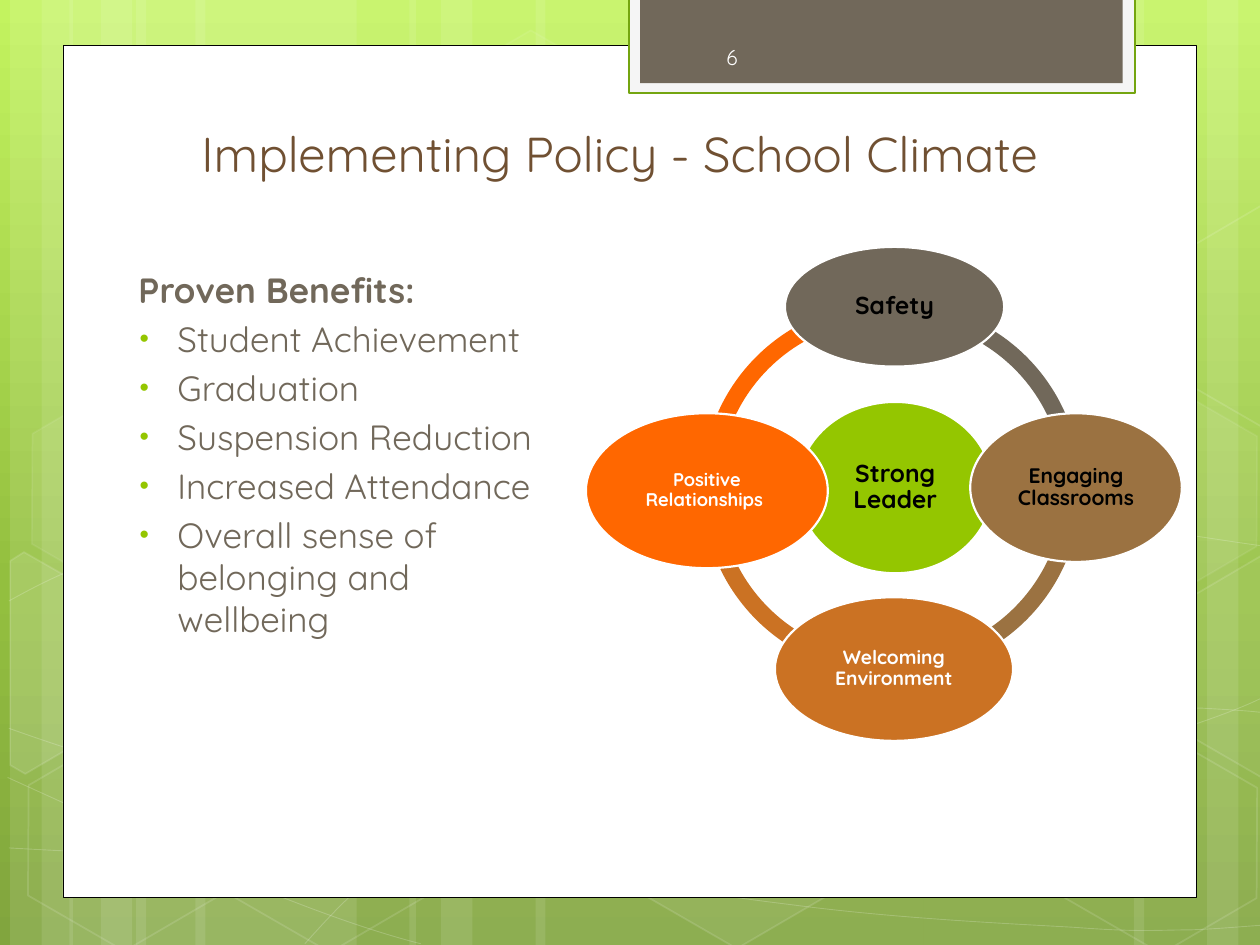
from copy import deepcopy
from math import cos, radians, sin
from lxml.etree import SubElement
from pptx import Presentation
from pptx.dml.color import RGBColor
from pptx.enum.shapes import MSO_SHAPE as SHAPE
from pptx.enum.text import MSO_ANCHOR as ANCHOR, PP_ALIGN as ALIGN
from pptx.oxml.ns import qn
from pptx.util import Inches, Pt

FONT = "Quicksand"
C = dict(white="FFFFFF", black="000000", taupe="71685A", green="94C600",
         edge="74A510", pale="F5F5F5", brown="705032", tan="9B7241",
         rust="CB7223", orange="FF6700", number="FEFEFE")
BACKGROUND = [(0, "C3F35F"), (0.62, "93BF3F"), (1, "81A53E")]

TITLE = "Implementing Policy - School Climate "
HEADING = "Proven Benefits:"
BENEFITS = ["Student Achievement", "Graduation", "Suspension Reduction",
            "Increased Attendance", "Overall sense of belonging and wellbeing"]

# Left, width
STRIPES = [(1.08, 1.75), (0.08, 0.5), (0.33, 0.83), (1.55, 1.75), (0.55, 0.5),
           (0.8, 0.83), (7.33, 1.75), (9.58, 0.5), (9, 0.83), (4.25, 3.08),
           (3.25, 0.5), (3.5, 0.83)]
# Start point, then three points for each cubic Bezier piece
CURVES = [
    [(0.07, 6.73), (0.61, 6.76), (1.15, 6.79), (1.9, 6.78), (2.65, 6.77),
     (3.58, 6.75), (4.58, 6.65), (5.58, 6.55), (7, 6.36), (7.92, 6.17),
     (8.83, 5.98), (9.77, 5.68), (10.07, 5.51)],
    [(0.07, 4.77), (0.36, 4.61), (0.65, 4.46), (1.21, 4.31), (1.78, 4.16),
     (2.59, 3.94), (3.47, 3.87), (4.36, 3.8), (5.44, 3.79), (6.54, 3.87),
     (7.64, 3.95), (9.47, 4.26), (10.07, 4.34)],
    [(0.06, 6.17), (1.27, 6.72), (2.47, 7.27), (3.34, 7.49)],
    [(0.07, 5.78), (0.38, 5.89), (0.7, 6), (1.28, 6.16), (1.86, 6.31),
     (2.73, 6.56), (3.57, 6.73), (4.4, 6.9), (5.45, 7.08), (6.28, 7.18),
     (7.11, 7.29), (8, 7.33), (8.53, 7.36), (9.05, 7.4), (9.19, 7.38),
     (9.45, 7.38), (9.71, 7.37), (9.89, 7.35), (10.07, 7.34)],
    [(2.42, 7.49), (2.6, 7.29), (2.78, 7.09), (3.02, 6.91), (3.26, 6.73),
     (3.6, 6.53), (3.88, 6.39), (4.16, 6.25), (4.33, 6.19), (4.7, 6.09),
     (5.06, 5.99), (5.73, 5.85), (6.08, 5.78), (6.44, 5.71), (6.49, 5.71),
     (6.8, 5.69), (7.11, 5.66), (7.6, 5.63), (7.94, 5.62), (8.29, 5.61),
     (8.86, 5.62), (8.86, 5.62), (8.86, 5.62), (9.53, 5.62), (9.53, 5.62),
     (9.71, 5.63), (9.88, 5.64), (9.97, 5.65), (10.06, 5.66), (10.03, 5.65),
     (10.06, 5.66)],
]
# Straight part of the last curve, as a Bezier piece
CURVES[-1][22:25] = [(8.86, 5.62), (9.53, 5.62), (9.53, 5.62)]
# Left, top, fill opacity, line opacity (percent)
HEXAGONS = [(3.34, 0.36, 4, 8), (4.97, 5.89, 6, 12), (0.11, 5.91, 0, 12),
            (0.14, 3.12, 7, 8), (1.74, 5.92, 0, 12), (7.53, 4.53, 10, 12),
            (8.34, 5.93, 0, 12), (8.34, 3.14, 7, 8)]
TILT = 30
# Hexagons cut by the slide edge: centre, points, fill opacity
CUT_HEXAGONS = [
    ((0.36, 5.35), [(0.08, 4.45), (0.19, 4.38), (0.96, 4.82), (0.95, 5.7),
                    (0.2, 6.14), (0.08, 6.07)], 10),
    ((9.85, 5.2), [(9.26, 4.85), (10.01, 4.41), (10.09, 4.46), (10.09, 6.13),
                   (10.02, 6.17), (9.26, 5.73)], 4),
    ((9.85, 2.41), [(9.26, 2.07), (10.01, 1.63), (10.1, 1.68), (10.09, 3.35),
                    (10.02, 3.39), (9.26, 2.95)], 0),
]
# Box, fill, line, line width
PANELS = [((0.5, 0.36, 9, 6.76), "white", "black", 0.5),
          ((4.99, -0.02, 4.02, 0.76), "pale", "edge", 1.25),
          ((5.08, -0.02, 3.83, 0.68), "taupe", None, 0)]
# Left, start and end angle in degrees, colour
ARCS = [(5.57, 179, 272.1, "orange"), (5.57, 88.2, 179.1, "rust"),
        (5.63, 0, 90.3, "tan"), (5.63, 270, 0, "taupe")]
# Text, box, fill, text colour, size
OVALS = [
    ("Strong Leader", (6.33, 3.19, 1.55, 1.36), "green", "black", 14),
    ("Safety", (6.23, 1.96, 1.74, 0.95), "taupe", "black", 14),
    ("Engaging Classrooms", (7.7, 3.28, 1.68, 1.18), "tan", "black", 12),
    ("Welcoming Environment", (6.15, 4.74, 1.89, 1.14), "rust", "white", 11),
    ("Positive Relationships ", (4.65, 3.28, 1.92, 1.23), "orange", "white", 10.5),
]

prs = Presentation()
prs.slide_width, prs.slide_height = Inches(10), Inches(7.5)
s = prs.slides.add_slide(prs.slide_layouts[5])
shapes = s.shapes


def paint(fill, color, opacity=100):
    if not color or not opacity:
        fill.background()
        return
    fill.solid()
    fill.fore_color.rgb = RGBColor.from_string(C[color])
    if opacity < 100:
        clr = fill._xPr.find(".//" + qn("a:srgbClr"))
        SubElement(clr, qn("a:alpha")).set("val", str(opacity * 1000))


def style(sp, fill, line=None, width=0, fill_op=100, line_op=100):
    sp.shadow.inherit = False
    paint(sp.fill, fill, fill_op)
    paint(sp.line.fill, line, line_op)
    if line:
        sp.line.width = Pt(width)
    return sp


def shape(kind, box, *args, **kw):
    return style(shapes.add_shape(kind, *map(Inches, box)), *args, **kw)


def outline(points, close):
    pts = [(Inches(x), Inches(y)) for x, y in points]
    fb = shapes.build_freeform(*pts[0])
    fb.add_line_segments(pts[1:], close=close)
    return fb.convert_to_shape()


def curve(points):
    """Join each three line ends into one cubic Bezier piece."""
    sp = outline(points, False)
    lines = sp._element.findall(".//" + qn("a:lnTo"))
    for i in range(0, len(lines), 3):
        piece = SubElement(lines[i].getparent(), qn("a:cubicBezTo"))
        for line in lines[i:i + 3]:
            piece.append(line[0])
            line.getparent().remove(line)
    return sp


def turn(point, center, degrees):
    a, (cx, cy) = radians(degrees), center
    x, y = point[0] - cx, point[1] - cy
    return cx + x * cos(a) - y * sin(a), cy + x * sin(a) + y * cos(a)


def write(p, text, size, color, bold=False, align=ALIGN.CENTER):
    p.text, p.alignment = text, align
    f = p.runs[0].font
    f.name, f.size, f.bold = FONT, Pt(size), bold
    f.color.rgb = RGBColor.from_string(C[color])


def place(sp, box, anchor):
    sp.left, sp.top, sp.width, sp.height = map(Inches, box)
    tf = sp.text_frame
    tf.word_wrap, tf.vertical_anchor = True, anchor
    return tf


def text_box(box, anchor):
    return place(shapes.add_textbox(0, 0, 0, 0), box, anchor)


# Background gradient
bg = s.background.fill
bg.gradient()
bg.gradient_angle = 270
stops = s.element.find(".//" + qn("a:gsLst"))
stops.append(deepcopy(stops[0]))
for stop, (pos, color) in zip(bg.gradient_stops, BACKGROUND):
    stop.position = pos
    stop.color.rgb = RGBColor.from_string(color)

# Stripes, curves and hexagons
for left, width in STRIPES:
    shape(SHAPE.RECTANGLE, (left, 0, width, 7.5), "white", fill_op=10)
for points in CURVES:
    style(curve(points), None, "white", 0.5, line_op=20)
for left, top, fill_op, line_op in HEXAGONS:
    sp = shape(SHAPE.HEXAGON, (left, top, 1.75, 1.52), "white", "white", 1, fill_op, line_op)
    sp.adjustments[0] = 0.285
    sp.rotation = TILT
for center, points, fill_op in CUT_HEXAGONS:
    sp = outline([turn(pt, center, -TILT) for pt in points], True)
    style(sp, "white", "white", 1, fill_op, 12).rotation = TILT

# White page and tab
for box, *look in PANELS:
    shape(SHAPE.RECTANGLE, box, *look)

# Title, brought in front of the page
title = shapes.title
shapes._spTree.append(title._element)
tf = place(title, (0.61, 0.92, 8.72, 0.58), ANCHOR.BOTTOM)
write(tf.paragraphs[0], TITLE, 28, "brown")

# Benefits list
tf = text_box((0.61, 2.08, 3.92, 4.28), ANCHOR.TOP)
p = tf.paragraphs[0]
write(p, HEADING, 20, "taupe", True, ALIGN.LEFT)
p._p.get_or_add_pPr().set("marL", str(Inches(0.39)))
for text in BENEFITS:
    p = tf.add_paragraph()
    write(p, text, 20, "taupe", align=ALIGN.LEFT)
    p.space_before = Pt(4)
    pPr = p._p.get_or_add_pPr()
    pPr.set("marL", str(Inches(0.7)))
    pPr.set("indent", str(Inches(-0.3)))
    SubElement(SubElement(pPr, qn("a:buClr")), qn("a:srgbClr")).set("val", C["green"])
    SubElement(pPr, qn("a:buSzPct")).set("val", "76000")
    SubElement(pPr, qn("a:buFont")).set("typeface", "Arial")
    SubElement(pPr, qn("a:buChar")).set("char", "•")

# Climate cycle: ring, then ovals
for left, start, end, color in ARCS:
    sp = shape(SHAPE.BLOCK_ARC, (left, 2.4, 2.95, 2.95), color)
    for i, value in enumerate((start * 0.6, end * 0.6, 0.046)):
        sp.adjustments[i] = value
for text, box, fill, color, size in OVALS:
    sp = shape(SHAPE.OVAL, box, fill, "white", 1.25)
    tf = place(sp, box, ANCHOR.MIDDLE)
    tf.margin_left = tf.margin_right = tf.margin_top = tf.margin_bottom = Inches(0.02)
    write(tf.paragraphs[0], text, size, color, True)
    tf.paragraphs[0].line_spacing = 0.9

# Slide number
tf = text_box((5.08, 0.25, 1.46, 0.4), ANCHOR.MIDDLE)
write(tf.paragraphs[0], "6", 12, "number")

prs.save("out.pptx")
